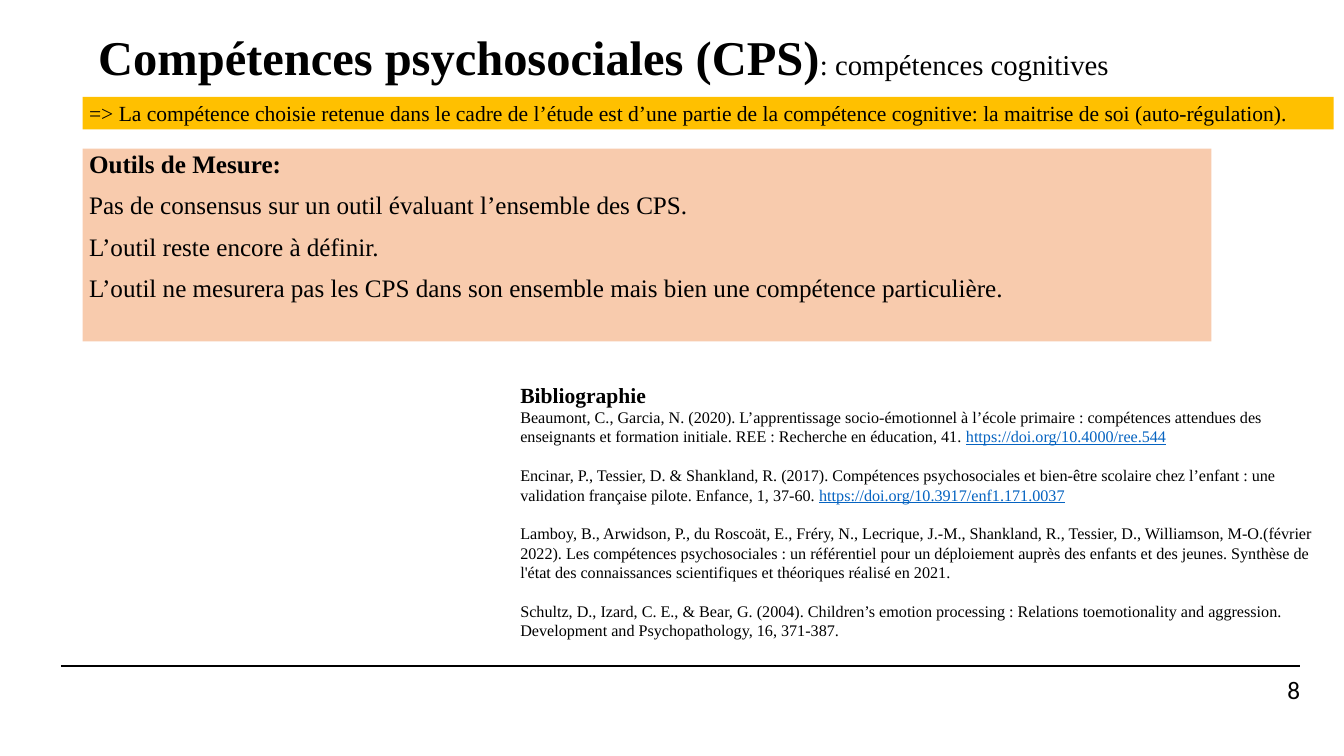
from dataclasses import dataclass, field
from typing import Optional

from lxml.etree import SubElement
from pptx import Presentation
from pptx.dml.color import RGBColor
from pptx.enum.shapes import MSO_CONNECTOR, MSO_SHAPE
from pptx.enum.text import MSO_ANCHOR as Anchor, PP_ALIGN as Align
from pptx.oxml.ns import qn
from pptx.util import Emu, Pt

PX = 9144  # 100 px to the inch
BLACK = RGBColor(0x00, 0x00, 0x00)
GOLD = RGBColor(0xFF, 0xC0, 0x00)
PEACH = RGBColor(0xF8, 0xCB, 0xAD)
LINK_BLUE = RGBColor(0x05, 0x63, 0xC1)
SERIF = "Times New Roman"
SANS = "Calibri"
REFERENCE_GAP = Pt(21.6)


@dataclass
class Span:
    text: str
    size: int
    bold: bool = False
    underline: bool = False
    color: RGBColor = BLACK
    font: str = SERIF


@dataclass
class Para:
    spans: list[Span]
    format: dict = field(default_factory=dict)


@dataclass
class Box:
    left: int
    top: int
    width: int
    height: int
    paras: list[Para]
    fill: Optional[RGBColor] = None
    anchor: Anchor = Anchor.TOP
    inset: Optional[int] = None


def px(length: int) -> Emu:
    return Emu(length * PX)


def set_values(target, values: dict) -> None:
    for name, value in values.items():
        setattr(target, name, value)


def add_box(slide, box: Box) -> None:
    """Draw a filled rectangle, or a text box where no fill is given."""
    place = [px(n) for n in (box.left, box.top, box.width, box.height)]
    if box.fill is None:
        shape = slide.shapes.add_textbox(*place)
    else:
        shape = slide.shapes.add_shape(MSO_SHAPE.RECTANGLE, *place)
        shape.shadow.inherit = False
        shape.fill.solid()
        shape.fill.fore_color.rgb = box.fill
        shape.line.fill.background()
    frame = shape.text_frame
    set_values(frame, {"word_wrap": True, "vertical_anchor": box.anchor})
    if box.inset is not None:
        sides = ("left", "top", "right", "bottom")
        set_values(frame, {f"margin_{side}": px(box.inset) for side in sides})
    for index, para in enumerate(box.paras):
        paragraph = frame.add_paragraph() if index else frame.paragraphs[0]
        set_values(paragraph, {"alignment": Align.LEFT} | para.format)
        for span in para.spans:
            run = paragraph.add_run()
            run.text = span.text
            set_values(run.font, {"name": span.font, "size": Pt(span.size),
                                  "bold": span.bold, "underline": span.underline})
            run.font.color.rgb = span.color


def add_footer_rule(slide) -> None:
    rule = slide.shapes.add_connector(
        MSO_CONNECTOR.STRAIGHT, px(94), px(1030), px(2011), px(1030))
    rule.line.color.rgb = BLACK
    rule.line.width = Pt(2)
    SubElement(rule._element.spPr, qn("a:effectLst"))


def measure_paras() -> list[Para]:
    lines = [
        "Outils de Mesure:",
        "Pas de consensus sur un outil évaluant l’ensemble des CPS.",
        "L’outil reste encore à définir.",
        "L’outil ne mesurera pas les CPS dans son ensemble mais bien une compétence particulière.",
    ]
    return [Para([Span(line, 28, bold=index == 0)],
                 {"alignment": Align.JUSTIFY, "line_spacing": 0.9,
                  "space_before": Pt(15.6 if index else 0)})
            for index, line in enumerate(lines)]


def bibliography_paras() -> list[Para]:
    references = [
        ("Beaumont, C., Garcia, N. (2020). L’apprentissage socio-émotionnel à l’école primaire : "
         "compétences attendues des enseignants et formation initiale. "
         "REE : Recherche en éducation, 41. ", "https://doi.org/10.4000/ree.544"),
        ("Encinar, P., Tessier, D. & Shankland, R. (2017). Compétences psychosociales et bien-être "
         "scolaire chez l’enfant : une validation française pilote. Enfance, 1, 37-60. ",
         "https://doi.org/10.3917/enf1.171.0037"),
        ("Lamboy, B., Arwidson, P., du Roscoät, E., Fréry, N., Lecrique, J.-M., Shankland, R., "
         "Tessier, D., Williamson, M-O.(février 2022). Les compétences psychosociales : un "
         "référentiel pour un déploiement auprès des enfants et des jeunes. Synthèse de l'état "
         "des connaissances scientifiques et théoriques réalisé en 2021.", ""),
        ("Schultz, D., Izard, C. E., & Bear, G. (2004). Children’s emotion processing : Relations "
         "toemotionality and aggression. Development and Psychopathology, 16, 371-387.", ""),
    ]
    paras = [Para([Span("Bibliographie", 24, bold=True)])]
    for index, (citation, link) in enumerate(references):
        spans = [Span(citation, 18)]
        if link:
            spans.append(Span(link, 18, underline=True, color=LINK_BLUE))
        paras.append(Para(spans, {"space_before": REFERENCE_GAP if index else Pt(0)}))
    return paras


def main() -> None:
    deck = Presentation()
    set_values(deck, {"slide_width": px(2079), "slide_height": px(1169)})
    slide = deck.slides.add_slide(deck.slide_layouts[6])
    title = Para([Span("Compétences psychosociales (CPS)", 54, bold=True),
                  Span(": compétences cognitives", 32)], {"line_spacing": 0.9})
    choice = Para([Span("=> La compétence choisie retenue dans le cadre de l’étude est d’une partie de "
                        "la compétence cognitive: la maitrise de soi (auto-régulation).", 24)],
                  {"alignment": Align.JUSTIFY})
    page_number = Para([Span("8", 28, font=SANS)], {"alignment": Align.RIGHT})
    add_footer_rule(slide)
    for box in (
        Box(1782, 1043, 229, 47, [page_number], anchor=Anchor.MIDDLE, inset=0),
        Box(142, 41, 1898, 103, [title], anchor=Anchor.MIDDLE),
        Box(128, 150, 1935, 50, [choice], fill=GOLD),
        Box(128, 230, 1746, 298, measure_paras(), fill=PEACH),
        Box(795, 585, 1268, 414, bibliography_paras()),
    ):
        add_box(slide, box)
    deck.save("out.pptx")


if __name__ == "__main__":
    main()
